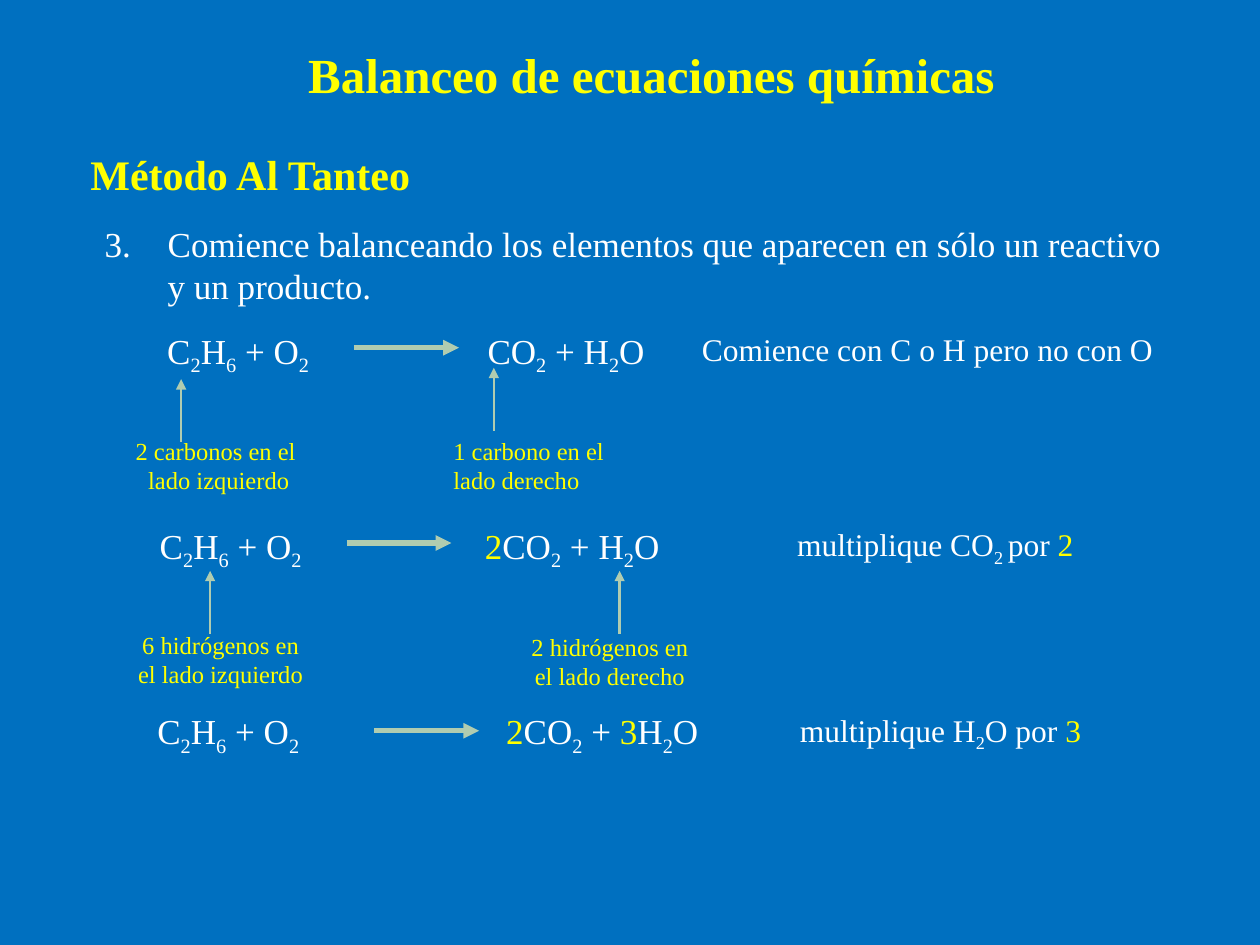
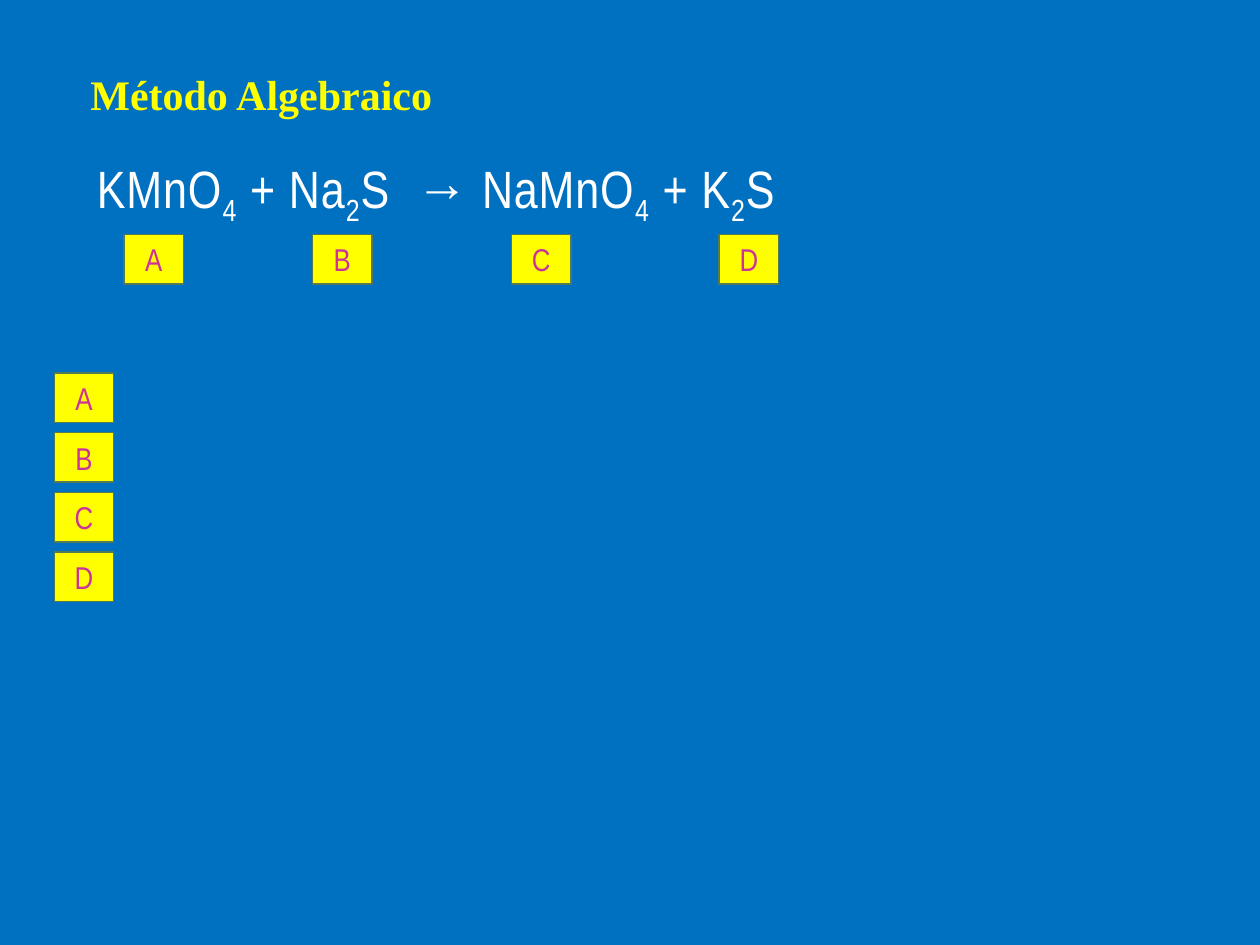
"""Builds two slides on balancing chemical equations by trial and by algebra."""
import pptx
import pptx.dml.color
import pptx.enum.shapes
import pptx.enum.text
import pptx.oxml.ns
import pptx.util
import lxml.etree

Pt = pptx.util.Pt
RGBColor = pptx.dml.color.RGBColor
ALIGN = pptx.enum.text.PP_ALIGN
ANCHOR = pptx.enum.text.MSO_ANCHOR
qn = pptx.oxml.ns.qn

BLUE = RGBColor(0x00, 0x70, 0xC0)
YELLOW = RGBColor(0xFF, 0xFF, 0x00)
WHITE = RGBColor(0xFF, 0xFF, 0xFF)
SAGE = RGBColor(0xB0, 0xCC, 0xB0)
OLIVE = RGBColor(0x54, 0x79, 0x57)
MAGENTA = RGBColor(0xCC, 0x33, 0x99)
SERIF = "Times New Roman"
NARROW = "Arial Narrow"


def write(frame, lines, size, color, align=ALIGN.LEFT, font=SERIF, bold=False,
          anchor=ANCHOR.TOP, wrap=True, spacing=0):
    """Write lines split into runs by |, where _ marks a subscript and * a yellow run."""
    frame.auto_size = pptx.enum.text.MSO_AUTO_SIZE.NONE
    frame.word_wrap = wrap
    frame.vertical_anchor = anchor
    for index, line in enumerate(lines):
        paragraph = frame.add_paragraph() if index else frame.paragraphs[0]
        paragraph.alignment = align
        paragraph.space_before = Pt(0)
        for piece in line.split("|"):
            run = paragraph.add_run()
            run.text = piece.lstrip("_*")
            run.font.name = font
            run.font.size = Pt(size)
            run.font.bold = bold
            run.font.color.rgb = YELLOW if piece.startswith("*") else color
            properties = run._r.get_or_add_rPr()
            if piece.startswith("_"):
                properties.set("baseline", "-25000")
            if spacing:
                properties.set("spc", str(spacing))


def add_label(slide, left, top, width, height, lines, size, color, **style):
    """Add a text box and write its lines."""
    box = slide.shapes.add_textbox(Pt(left), Pt(top), Pt(width), Pt(height))
    write(box.text_frame, lines, size, color, **style)


deck = pptx.Presentation()
deck.slide_width = Pt(720)
deck.slide_height = Pt(540)
deck.slide_master.background.fill.solid()
deck.slide_master.background.fill.fore_color.rgb = BLUE
heading_style = dict(size=24, color=YELLOW, bold=True, anchor=ANCHOR.MIDDLE)

trial = deck.slides.add_slide(deck.slide_layouts[1])
topic = trial.shapes.title
topic.left, topic.top, topic.width, topic.height = Pt(155.5), Pt(18), Pt(420), Pt(48)
write(topic.text_frame, ["Balanceo de ecuaciones químicas"], 28, YELLOW,
      align=ALIGN.RIGHT, bold=True, anchor=ANCHOR.MIDDLE)
add_label(trial, 44.6, 75, 199, 48, ["Método Al Tanteo"], **heading_style)

step = trial.placeholders[1]
step.left, step.top, step.width, step.height = Pt(52.6), Pt(123.8), Pt(619), Pt(55.5)
write(step.text_frame, ["Comience balanceando los elementos que aparecen en sólo "
                        "un reactivo y un producto."], 20, WHITE)
numbering = step.text_frame.paragraphs[0]._p.get_or_add_pPr()
numbering.set("marL", str(Pt(36)))
numbering.set("indent", str(-Pt(36)))
lxml.etree.SubElement(numbering, qn("a:buAutoNum"), type="arabicPeriod", startAt="3")

arrows = []
reactions = [
    (184.5, 88.5, 202.3, 198.7, 271.5, 106.5, "CO|_2| + H|_2|O",
     394, 272, "Comience con C o H pero no con O"),
    (296, 84.2, 198, 310.3, 270, 116.5, "*2|CO|_2| + H|_2|O",
     448.5, 175, "multiplique CO|_2 |por |*2"),
    (402, 82.8, 213.8, 417.6, 282.2, 126.5, "*2|CO|_2| + |*3|H|_2|O",
     450, 175.5, "multiplique H|_2|O por |*3"),
]
for (top, reactant_left, arrow_left, arrow_top, product_left, product_width, products,
     advice_left, advice_width, advice) in reactions:
    add_label(trial, reactant_left, top, 98.6, 31.5, ["C|_2|H|_6| + O|_2"], 20, WHITE, wrap=False)
    add_label(trial, product_left, top, product_width, 31.5, [products], 20, WHITE, wrap=False)
    add_label(trial, advice_left, top + 0.5, advice_width, 29, [advice], 18, WHITE, wrap=False)
    arrows.append((arrow_left, arrow_top, arrow_left + 60, arrow_top, 3))

atom_counts = [
    (103.5, 216.7, 70, 245.5, 110, ALIGN.CENTER, ["2 carbonos en el ", "lado izquierdo"]),
    (282.2, 210.2, 252, 245.5, 108, ALIGN.LEFT, ["1 carbono en el lado derecho"]),
    (120.1, 326.2, 71.3, 356.4, 109.5, ALIGN.CENTER, ["6 hidrógenos en", "el lado izquierdo"]),
    (354.1, 326.2, 291.6, 357.4, 113.8, ALIGN.CENTER, ["2 hidrógenos en el lado derecho"]),
]
for pointer_left, tip, left, top, width, align, count in atom_counts:
    add_label(trial, left, top, width, 41, count, 14, YELLOW, align=align, wrap=len(count) == 1)
    arrows.append((pointer_left, tip + 36, pointer_left, tip, 1.5))

for start_x, start_y, end_x, end_y, weight in arrows:
    arrow = trial.shapes.add_connector(pptx.enum.shapes.MSO_CONNECTOR.STRAIGHT,
                                       Pt(start_x), Pt(start_y), Pt(end_x), Pt(end_y))
    arrow.line.color.rgb = SAGE
    arrow.line.width = Pt(weight)
    outline = arrow._element.spPr
    lxml.etree.SubElement(outline.find(qn("a:ln")), qn("a:tailEnd"), type="triangle")
    lxml.etree.SubElement(outline, qn("a:effectLst"))

algebra = deck.slides.add_slide(deck.slide_layouts[5])
add_label(algebra, 44.6, 29.5, 219, 48, ["Método Algebraico"], **heading_style)
equation = algebra.shapes.title
equation.left, equation.top, equation.width, equation.height = Pt(48.2), Pt(88.5), Pt(420), Pt(45.4)
write(equation.text_frame, ["KMnO|_4| + Na|_2|S  → NaMnO|_4| + K|_2|S"], 30, WHITE,
      font=NARROW, anchor=ANCHOR.BOTTOM, spacing=50)

for row, (letter, term_left) in enumerate(zip("ABCD", (70.8, 178.6, 292.2, 411))):
    for left, top in ((term_left, 134), (31, 213.2 + 34.1 * row)):
        coefficient = algebra.shapes.add_shape(pptx.enum.shapes.MSO_SHAPE.RECTANGLE,
                                               Pt(left), Pt(top), Pt(34), Pt(28.3))
        coefficient.shadow.inherit = False
        coefficient.fill.solid()
        coefficient.fill.fore_color.rgb = YELLOW
        coefficient.line.color.rgb = OLIVE
        coefficient.line.width = Pt(0.85)
        write(coefficient.text_frame, [letter], 18, MAGENTA, align=ALIGN.CENTER,
              font=NARROW, anchor=ANCHOR.MIDDLE)

deck.save("out.pptx")
